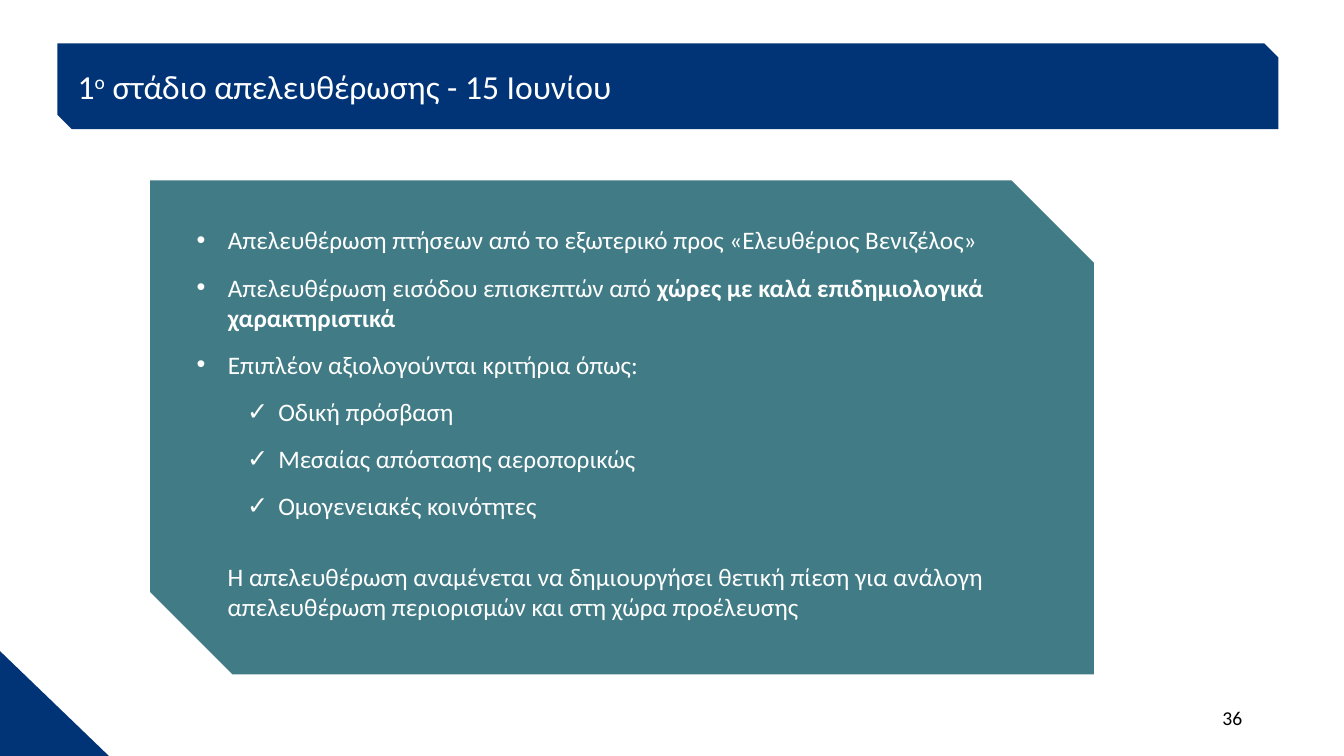
from dataclasses import dataclass

import lxml.etree
import pptx
import pptx.dml.color
import pptx.enum.shapes
import pptx.enum.text
import pptx.oxml.ns
import pptx.util

Inches = pptx.util.Inches
Pt = pptx.util.Pt
Preset = pptx.enum.shapes.MSO_SHAPE
Align = pptx.enum.text.PP_ALIGN
Anchor = pptx.enum.text.MSO_ANCHOR

NAVY = "013476"
TEAL = "417B85"
WHITE = "FFFFFF"
BLACK = "000000"


@dataclass(frozen=True)
class Area:
    left: float
    top: float
    width: float
    height: float


@dataclass(frozen=True)
class Panel:
    preset: Preset
    area: Area
    fill: str


@dataclass(frozen=True)
class Span:
    text: str
    bold: bool = False
    raised: bool = False


@dataclass(frozen=True)
class Item:
    spans: tuple[Span, ...]
    level: int = 0


BANNER = Area(0.57, 0.43, 12.11, 0.85)
PANELS = (
    Panel(Preset.RIGHT_TRIANGLE, Area(0, 6.46, 1.08, 1.04), NAVY),
    Panel(Preset.SNIP_2_DIAG_RECTANGLE, BANNER, NAVY),
    Panel(Preset.SNIP_2_DIAG_RECTANGLE, Area(1.49, 1.79, 9.36, 4.9), TEAL),
)
TITLE = (Span("1"), Span("ο", raised=True), Span(" στάδιο απελευθέρωσης - 15 Ιουνίου"))
ITEMS = (
    Item((Span("Απελευθέρωση πτήσεων από το εξωτερικό προς «Ελευθέριος Βενιζέλος»"),)),
    Item((
        Span("Απελευθέρωση εισόδου επισκεπτών από "),
        Span("χώρες με καλά επιδημιολογικά χαρακτηριστικά", bold=True),
    )),
    Item((Span("Επιπλέον αξιολογούνται κριτήρια όπως:"),)),
    Item((Span("Οδική πρόσβαση"),), level=1),
    Item((Span("Μεσαίας απόστασης αεροπορικώς"),), level=1),
    Item((Span("Ομογενειακές κοινότητες"),), level=1),
)
CONCLUSION = Span(
    "Η απελευθέρωση αναμένεται να δημιουργήσει θετική πίεση για ανάλογη "
    "απελευθέρωση περιορισμών και στη χώρα προέλευσης"
)
BULLETS = ("•", "✓")
HANGING = 0.31
LEVEL_STEP = 0.5


def color(value: str) -> pptx.dml.color.RGBColor:
    return pptx.dml.color.RGBColor.from_string(value)


def place(box, area: Area) -> None:
    box.left, box.top = Inches(area.left), Inches(area.top)
    box.width, box.height = Inches(area.width), Inches(area.height)


def add_panel(page, panel: Panel) -> None:
    area = panel.area
    shape = page.shapes.add_shape(
        panel.preset, Inches(area.left), Inches(area.top), Inches(area.width), Inches(area.height)
    )
    shape.shadow.inherit = False
    shape.fill.solid()
    shape.fill.fore_color.rgb = color(panel.fill)
    shape.line.fill.background()


def add_spans(para, spans: tuple[Span, ...], size: float, ink: str = WHITE) -> None:
    for span in spans:
        run = para.add_run()
        run.text = span.text
        run.font.name = "Calibri"
        run.font.size = Pt(size)
        run.font.bold = span.bold
        run.font.color.rgb = color(ink)
        if span.raised:
            run._r.get_or_add_rPr().set("baseline", "30000")


def add_bullet(para, level: int) -> None:
    properties = para._p.get_or_add_pPr()
    properties.set("marL", str(Inches(HANGING + LEVEL_STEP * level)))
    properties.set("indent", str(-Inches(HANGING)))
    qn = pptx.oxml.ns.qn
    lxml.etree.SubElement(properties, qn("a:buFont")).set("typeface", "Arial")
    lxml.etree.SubElement(properties, qn("a:buChar")).set("char", BULLETS[level])


def bring_to_front(box) -> None:
    box.element.getparent().append(box.element)


def fill_title(box) -> None:
    place(box, BANNER)
    frame = box.text_frame
    frame.word_wrap = True
    frame.auto_size = pptx.enum.text.MSO_AUTO_SIZE.NONE
    frame.vertical_anchor = Anchor.MIDDLE
    frame.margin_left = frame.margin_right = Inches(0.2)
    frame.margin_top = frame.margin_bottom = Inches(0.02)
    frame.paragraphs[0].alignment = Align.LEFT
    add_spans(frame.paragraphs[0], TITLE, 24)
    bring_to_front(box)


def fill_list(box) -> None:
    place(box, Area(1.85, 2.18, 8.42, 3.3))
    frame = box.text_frame
    frame.word_wrap = True
    frame.auto_size = pptx.enum.text.MSO_AUTO_SIZE.NONE
    for index, item in enumerate(ITEMS):
        para = frame.add_paragraph() if index else frame.paragraphs[0]
        para.level = item.level
        para.space_before = Pt(6 if index else 0)
        para.space_after = Pt(6)
        add_bullet(para, item.level)
        add_spans(para, item.spans, 18)
    bring_to_front(box)


def add_label(page, area: Area, span: Span, size: float, ink: str, alignment: Align) -> None:
    box = page.shapes.add_textbox(0, 0, 0, 0)
    place(box, area)
    box.text_frame.word_wrap = True
    para = box.text_frame.paragraphs[0]
    para.alignment = alignment
    add_spans(para, (span,), size, ink)


def main() -> None:
    deck = pptx.Presentation()
    deck.slide_width, deck.slide_height = Inches(13.33), Inches(7.5)
    page = deck.slides.add_slide(deck.slide_layouts.get_by_name("Title and Content"))
    for panel in PANELS:
        add_panel(page, panel)
    fill_title(page.shapes.title)
    fill_list(page.placeholders[1])
    add_label(page, Area(2.16, 5.52, 8.01, 0.71), CONCLUSION, 18, WHITE, Align.LEFT)
    add_label(page, Area(9.42, 6.95, 3, 0.4), Span("36"), 14, BLACK, Align.RIGHT)
    deck.save("out.pptx")


if __name__ == "__main__":
    main()
